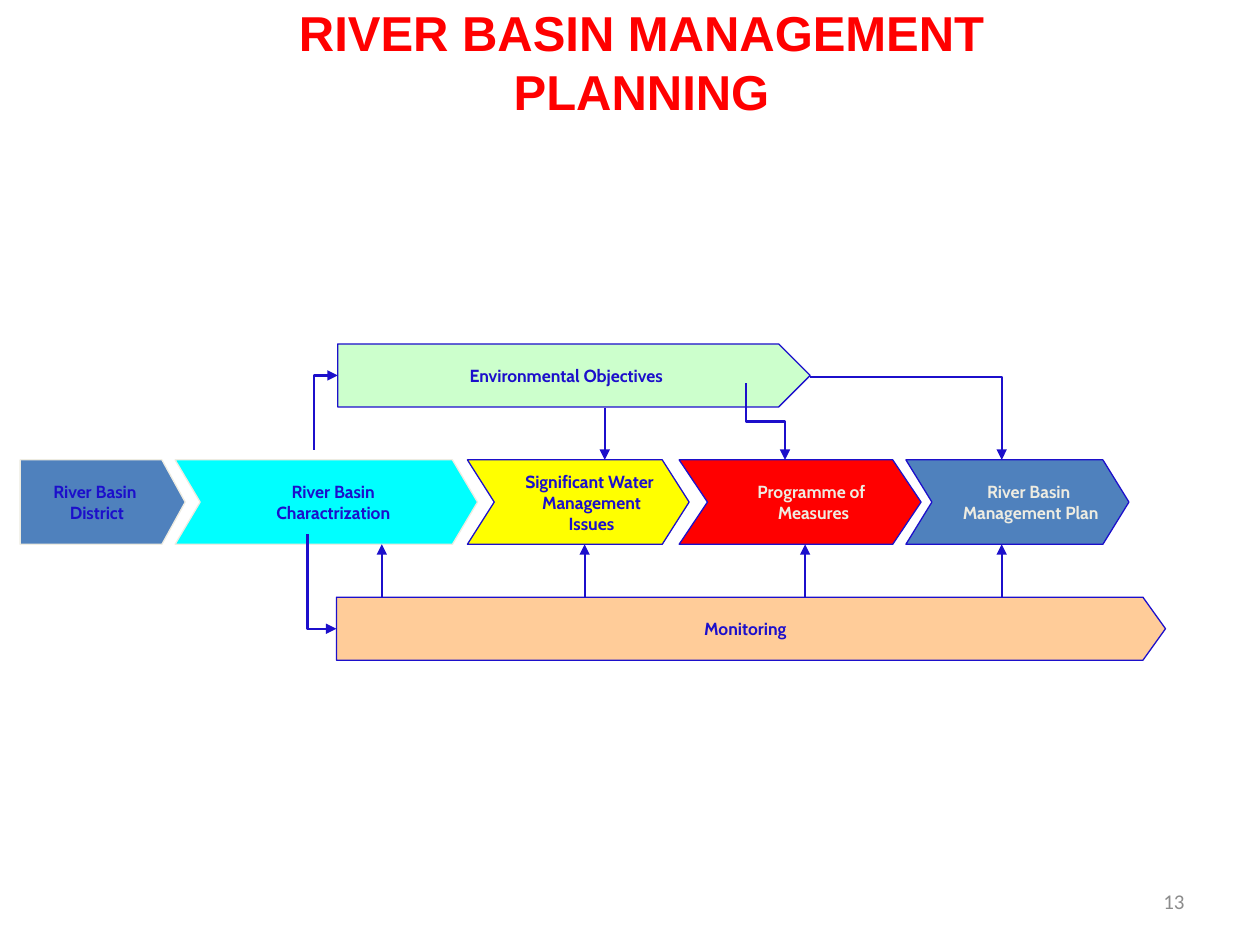
from dataclasses import dataclass

from lxml.etree import SubElement
from pptx import Presentation
from pptx.dml.color import RGBColor as Rgb
from pptx.enum.shapes import MSO_CONNECTOR as Link, MSO_SHAPE as Kind
from pptx.enum.text import MSO_ANCHOR as Anchor, PP_ALIGN as Align
from pptx.oxml.ns import qn
from pptx.util import Inches, Pt


@dataclass(frozen=True)
class Theme:
    blue: str = "1C0FCB"
    steel: str = "4F81BD"
    cream: str = "EEECE1"
    aqua: str = "00FFFF"
    yellow: str = "FFFF00"
    red: str = "FF0000"
    green: str = "CCFFCC"
    peach: str = "FFCC99"
    gray: str = "8C8C8C"
    head: float = 28
    label: float = 10
    page: float = 12
    edge: float = 0.75
    wire: float = 1.25


@dataclass(frozen=True)
class Step:
    text: str
    left: float
    top: float
    width: float
    height: float
    fill: str
    adj: float
    kind: Kind = Kind.CHEVRON
    edge: str = Theme.blue
    ink: str = Theme.blue
    margin: float = 0
    hang: float = 0


@dataclass(frozen=True)
class Bend:
    start: tuple[float, float]
    end: tuple[float, float]
    turn: int = 0  # degrees; 90 leaves upward first, 270 downward first
    folds: int = 2


T = Theme()
ROW, HIGH = 3.65, 0.67  # main row of steps
FOOT = ROW + HIGH
BAR, MON = 0.5, 4.74  # bar height, top of the monitoring bar

STEPS = [
    Step("River Basin\nCharactrization", 1.39, ROW, 2.4, HIGH, T.aqua, 0.297,
         edge=T.cream, margin=0.21, hang=-0.1),
    Step("River Basin \nDistrict", 0.16, ROW, 1.31, HIGH, T.steel, 0.275,
         Kind.PENTAGON, edge=T.cream),
    Step("Significant Water \nManagement\nIssues", 3.71, ROW, 1.76, HIGH,
         T.yellow, 0.318, margin=0.21),
    Step("Programme of \nMeasures", 5.39, ROW, 1.92, HIGH, T.red, 0.336,
         ink=T.cream, margin=0.21),
    Step("River Basin \nManagement Plan", 7.19, ROW, 1.77, HIGH, T.steel,
         0.308, ink=T.cream, margin=0.21),
    Step("Environmental Objectives", 2.68, 2.73, 3.75, BAR, T.green, 0.5,
         Kind.PENTAGON),
    Step("Monitoring", 2.67, MON, 6.58, BAR, T.peach, 0.358, Kind.PENTAGON),
]
RISES = [3.03, 4.64, 6.39, 7.95]  # arrows up from monitoring
BENDS = [
    Bend((5.92, 3.04), (6.23, ROW), 270, 3),
    Bend((6.43, 2.99), (7.95, ROW)),
    Bend((2.49, 3.57), (2.68, 2.98), 90),
    Bend((2.44, 4.24), (2.67, 4.99), 270),
]


def write(frame, text: str, font: str, size: float, ink: str, bold=True,
          align=Align.CENTER, wrap=False, margin=0.0, hang=0.0) -> None:
    frame.word_wrap = wrap
    for i, line in enumerate(text.split("\n")):
        para = frame.paragraphs[0] if i == 0 else frame.add_paragraph()
        para.add_run().text = line
        para.alignment = align
        if margin:
            props = para._p.get_or_add_pPr()
            props.set("marL", str(Inches(margin)))
            props.set("indent", str(Inches(hang)))
        para.font.name, para.font.size = font, Pt(size)
        para.font.bold = bold
        para.font.color.rgb = Rgb.from_string(ink)


def draw(shapes, step: Step) -> None:
    shape = shapes.add_shape(step.kind, Inches(step.left), Inches(step.top),
                             Inches(step.width), Inches(step.height))
    shape.adjustments[0] = step.adj
    shape.shadow.inherit = False
    shape.fill.solid()
    shape.fill.fore_color.rgb = Rgb.from_string(step.fill)
    shape.line.color.rgb = Rgb.from_string(step.edge)
    shape.line.width = Pt(T.edge)
    shape.text_frame.vertical_anchor = Anchor.MIDDLE
    write(shape.text_frame, step.text, "Cabin", T.label, step.ink,
          margin=step.margin, hang=step.hang)


def arrow(shapes, start, end, kind=Link.STRAIGHT):
    wire = shapes.add_connector(kind, *map(Inches, (*start, *end)))
    wire.line.color.rgb = Rgb.from_string(T.blue)
    wire.line.width = Pt(T.wire)
    SubElement(wire.line._get_or_add_ln(), qn("a:tailEnd"), type="triangle")
    SubElement(wire._element.spPr, qn("a:effectLst"))
    return wire


def bend(shapes, item: Bend) -> None:
    (x1, y1), (x2, y2) = item.start, item.end
    if item.turn:
        # Unturned ends, found by turning back about the centre
        sign = 1 if item.turn == 90 else -1
        cx, cy = (x1 + x2) / 2, (y1 + y2) / 2
        dx, dy = sign * (y2 - y1) / 2, -sign * (x2 - x1) / 2
        x1, y1, x2, y2 = cx - dx, cy - dy, cx + dx, cy + dy
    wire = arrow(shapes, (x1, y1), (x2, y2), Link.ELBOW)
    props = wire._element.spPr
    props.find(qn("a:prstGeom")).set("prst", f"bentConnector{item.folds}")
    if item.turn:
        props.find(qn("a:xfrm")).set("rot", str(item.turn * 60000))


def main() -> None:
    deck = Presentation()
    deck.slide_width, deck.slide_height = Inches(10), Inches(7.5)
    shapes = deck.slides.add_slide(deck.slide_layouts[6]).shapes

    # Page number and title
    page = shapes.add_textbox(*map(Inches, (7.17, 6.95, 2.33, 0.4)))
    page.text_frame.vertical_anchor = Anchor.MIDDLE
    write(page.text_frame, "13", "Calibri", T.page, T.gray, bold=False,
          align=Align.RIGHT, wrap=True)
    title = shapes.add_textbox(*map(Inches, (2.24, -0.03, 5.81, 1.04)))
    write(title.text_frame, "RIVER BASIN MANAGEMENT \nPLANNING ", "Arial",
          T.head, T.red)

    # Steps and bars
    for step in STEPS:
        draw(shapes, step)

    # Arrows
    for x in RISES:
        arrow(shapes, (x, MON), (x, FOOT))
    arrow(shapes, (4.8, 3.24), (4.8, ROW))
    for item in BENDS:
        bend(shapes, item)

    deck.save("out.pptx")


if __name__ == "__main__":
    main()
